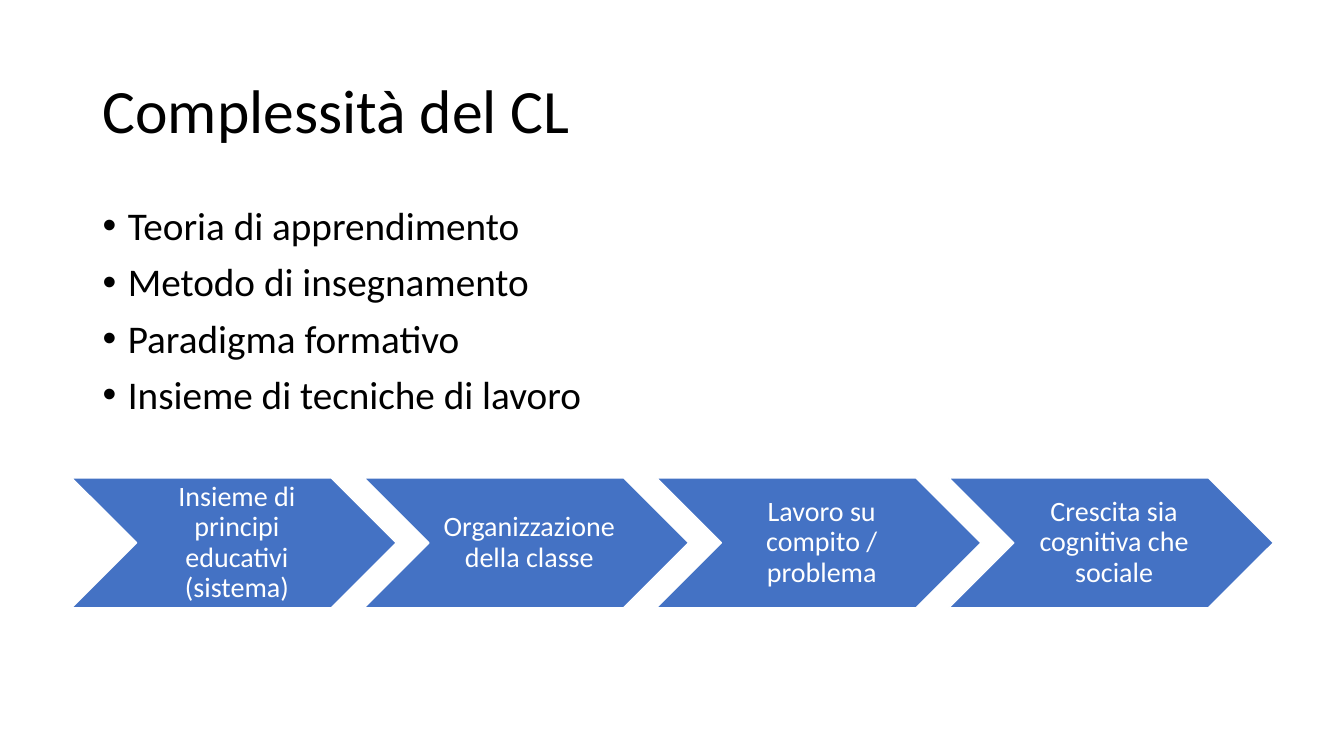
from lxml.etree import SubElement
from pptx import Presentation
from pptx.dml.color import RGBColor
from pptx.enum.shapes import MSO_SHAPE
from pptx.enum.text import MSO_ANCHOR, PP_ALIGN
from pptx.oxml.ns import qn
from pptx.util import Inches, Pt

TITLE = "Complessità del CL"
POINTS = [
    "Teoria di apprendimento",
    "Metodo di insegnamento",
    "Paradigma formativo",
    "Insieme di tecniche di lavoro",
]
STEPS = [
    "Insieme di principi educativi (sistema)",
    "Organizzazione della classe",
    "Lavoro su compito / problema",
    "Crescita sia cognitiva che sociale",
]

FONT = "Calibri"
BLACK = RGBColor(0x00, 0x00, 0x00)
WHITE = RGBColor(0xFF, 0xFF, 0xFF)
BLUE = RGBColor(0x44, 0x72, 0xC4)

# Step row, in inches
LEFT, TOP, WIDE, HIGH = 0.71, 4.74, 3.22, 1.29
PITCH = 2.9
INSET = HIGH / 2


def add_text(slide, box, lines, size, color, anchor=MSO_ANCHOR.TOP):
    """Add a wrapped text box with one paragraph per line."""
    frame = slide.shapes.add_textbox(*map(Inches, box)).text_frame
    frame.word_wrap = True
    frame.vertical_anchor = anchor
    for i, line in enumerate(lines):
        para = frame.paragraphs[0] if i == 0 else frame.add_paragraph()
        para.line_spacing = 0.9
        run = para.add_run()
        run.text = line
        run.font.name = FONT
        run.font.size = Pt(size)
        run.font.color.rgb = color
    return frame


def add_bullet(para):
    para.space_before = Pt(10)
    props = para._p.get_or_add_pPr()
    props.set("marL", str(Inches(0.25)))
    props.set("indent", str(Inches(-0.25)))
    SubElement(props, qn("a:buFont")).set("typeface", "Arial")
    SubElement(props, qn("a:buChar")).set("char", "•")


def add_step(slide, left, label):
    shape = slide.shapes.add_shape(
        MSO_SHAPE.CHEVRON, *map(Inches, (left, TOP, WIDE, HIGH)))
    shape.shadow.inherit = False
    shape.fill.solid()
    shape.fill.fore_color.rgb = BLUE
    shape.line.color.rgb = WHITE
    shape.line.width = Pt(1)

    box = (left + INSET, TOP, WIDE - 2 * INSET, HIGH)
    frame = add_text(slide, box, [label], 20, WHITE, MSO_ANCHOR.MIDDLE)
    frame.margin_left = Inches(0.09)
    frame.margin_top = frame.margin_right = frame.margin_bottom = Inches(0.03)
    frame.paragraphs[0].alignment = PP_ALIGN.CENTER


def main():
    deck = Presentation()
    deck.slide_width, deck.slide_height = Inches(13.33), Inches(7.5)
    slide = deck.slides.add_slide(deck.slide_layouts[6])

    add_text(slide, (0.92, 0.4, 11.5, 1.45), [TITLE], 44, BLACK,
             MSO_ANCHOR.MIDDLE)
    body = add_text(slide, (0.92, 2, 11.5, 4.76), POINTS, 28, BLACK)
    for para in body.paragraphs:
        add_bullet(para)
    for i, label in enumerate(STEPS):
        add_step(slide, LEFT + i * PITCH, label)

    deck.save("out.pptx")


if __name__ == "__main__":
    main()
